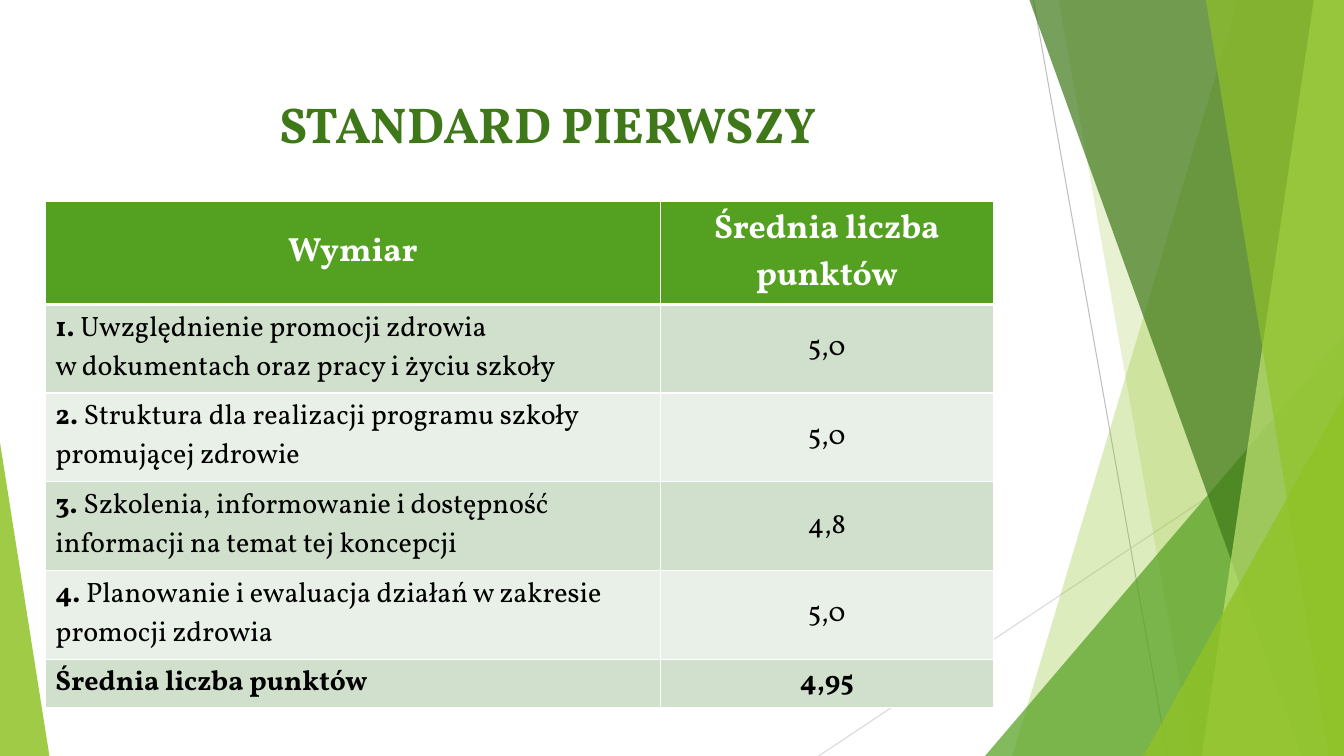
from dataclasses import dataclass

import pptx
import pptx.dml.color
import pptx.enum.shapes
import pptx.enum.text
import pptx.oxml
import pptx.oxml.ns
import pptx.util

Inches = pptx.util.Inches
ANCHOR = pptx.enum.text.MSO_ANCHOR
ALIGN = pptx.enum.text.PP_ALIGN


@dataclass(frozen=True)
class Theme:
    """Hold the colours, font and type sizes of the slide."""
    font: str = "Vollkorn"
    lime: str = "90C226"
    green: str = "54A021"
    dark: str = "3F7819"
    pale: str = "C0E474"
    band: tuple = ("D1DFCD", "E9F0E8")
    white: str = "FFFFFF"
    black: str = "000000"
    grey: str = "BFBFBF"
    light: str = "D9D9D9"
    title: int = 36
    head: int = 24
    body: int = 20


THEME = Theme()
WIDE, HIGH = 13.33, 7.5

WEDGES = [
    (12.28, 10.04, THEME.lime, 30),
    (10.5, 11.83, THEME.lime, 20),
    (10.21, 12.91, THEME.dark, 70),
    (13.03, 11.92, THEME.pale, 70),
    (11.96, 13.18, THEME.lime, 65),
]
ROWS = [
    ("1. ", "Uwzględnienie promocji zdrowia\vw dokumentach oraz pracy i życiu szkoły", "5,0"),
    ("2. ", "Struktura dla realizacji programu szkoły promującej zdrowie", "5,0"),
    ("3. ", "Szkolenia, informowanie i dostępność informacji na temat tej koncepcji", "4,8"),
    ("4. ", "Planowanie i ewaluacja działań w zakresie promocji zdrowia", "5,0"),
]


def rgb(code):
    """Turn a hex code into a colour."""
    return pptx.dml.color.RGBColor.from_string(code)


def paint(shape, code, alpha):
    """Fill a shape with a see-through colour and no outline."""
    shape.shadow.inherit = False
    shape.line.fill.background()
    shape.fill.solid()
    shape.fill.fore_color.rgb = rgb(code)
    tint = shape.fill._xPr.find(".//" + pptx.oxml.ns.qn("a:srgbClr"))
    tint.append(pptx.oxml.parse_xml(
        f'<a:alpha {pptx.oxml.ns.nsdecls("a")} val="{alpha * 1000}"/>'))


def wedge(slide, top, base, code, alpha):
    """Draw a facet from a slanted edge to the right side."""
    spots = [(WIDE, 0), (WIDE, HIGH), (base, HIGH)]
    build = slide.shapes.build_freeform(Inches(top), Inches(0))
    build.add_line_segments([(Inches(x), Inches(y)) for x, y in spots])
    paint(build.convert_to_shape(), code, alpha)


def peak(slide, left, top, width, tip, code, alpha):
    """Draw a triangle that stands on the bottom edge."""
    shape = slide.shapes.add_shape(
        pptx.enum.shapes.MSO_SHAPE.ISOSCELES_TRIANGLE,
        Inches(left), Inches(top), Inches(width), Inches(HIGH - top))
    shape.adjustments[0] = tip
    paint(shape, code, alpha)


def rule(slide, start, end, code):
    """Draw a thin straight line."""
    line = slide.shapes.add_connector(
        pptx.enum.shapes.MSO_CONNECTOR.STRAIGHT,
        *(Inches(v) for v in start + end))
    line.line.color.rgb = rgb(code)
    line.line.width = pptx.util.Pt(0.75)
    line._element.spPr.append(pptx.oxml.parse_xml(
        f'<a:effectLst {pptx.oxml.ns.nsdecls("a")}/>'))


def write(frame, runs, size, code, align=ALIGN.LEFT):
    """Add text and bold pairs as runs of one paragraph."""
    para = frame.paragraphs[0]
    para.alignment = align
    for text, bold in runs:
        for i, part in enumerate(text.split("\v")):
            if i:
                para.add_line_break()
            run = para.add_run()
            run.text = part
            run.font.name = THEME.font
            run.font.size = pptx.util.Pt(size)
            run.font.bold = bold
            run.font.color.rgb = rgb(code)


def title(slide, text):
    """Add the slide heading."""
    box = slide.shapes.add_textbox(
        Inches(0.73), Inches(0.87), Inches(9.4), Inches(1.13))
    box.text_frame.word_wrap = True
    write(box.text_frame, [(text, True)], THEME.title, THEME.dark, ALIGN.CENTER)


def edge(cell, base):
    """Give a cell white borders, with its own bottom and top weight."""
    props = cell._tc.get_or_add_tcPr()
    widths = {"L": 1, "R": 1, "T": base[0], "B": base[1]}
    for i, (side, width) in enumerate(widths.items()):
        props.insert(i, pptx.oxml.parse_xml(
            f'<a:ln{side} {pptx.oxml.ns.nsdecls("a")} w="{pptx.util.Pt(width)}">'
            f'<a:solidFill><a:srgbClr val="{THEME.white}"/></a:solidFill>'
            f'</a:ln{side}>'))


def table(slide):
    """Add the table of dimensions and mean scores."""
    tall = [1.02] + [0.88] * len(ROWS) + [0.48]
    wide = [6.1, 3.3]
    grid = slide.shapes.add_table(
        len(tall), len(wide), Inches(0.45), Inches(2),
        Inches(sum(wide)), Inches(sum(tall))).table
    for col, width in zip(grid.columns, wide):
        col.width = Inches(width)
    for row, height in zip(grid.rows, tall):
        row.height = Inches(height)
    mean = "Średnia liczba punktów"
    lines = [([("Wymiar", True)], [(mean, True)])]
    lines += [([(mark, True), (text, False)], [(score, False)])
              for mark, text, score in ROWS]
    lines.append(([(mean, True)], [("4,95", True)]))
    for r, line in enumerate(lines):
        head = r == 0
        for c, runs in enumerate(line):
            cell = grid.cell(r, c)
            mid = head or c == 1
            cell.vertical_anchor = ANCHOR.MIDDLE if mid else ANCHOR.TOP
            cell.fill.solid()
            cell.fill.fore_color.rgb = rgb(
                THEME.green if head else THEME.band[(r - 1) % 2])
            edge(cell, (3 if r == 1 else 1, 3 if head else 1))
            write(cell.text_frame, runs, THEME.head if head else THEME.body,
                  THEME.white if head else THEME.black,
                  ALIGN.CENTER if mid else ALIGN.LEFT)


def main():
    """Build the slide and save it."""
    deck = pptx.Presentation()
    deck.slide_width, deck.slide_height = Inches(WIDE), Inches(HIGH)
    slide = deck.slides.add_slide(deck.slide_layouts[6])
    rule(slide, (10.25, 0), (11.58, HIGH), THEME.grey)
    rule(slide, (WIDE, 4.03), (8.12, HIGH), THEME.light)
    for facet in WEDGES[:2]:
        wedge(slide, *facet)
    peak(slide, 9.77, 3.33, 3.56, 1, THEME.green, 72)
    for facet in WEDGES[2:]:
        wedge(slide, *facet)
    peak(slide, 11.34, 3.93, 1.99, 1, THEME.lime, 80)
    peak(slide, 0, 4.39, 0.49, 0, THEME.lime, 85)
    title(slide, "STANDARD PIERWSZY")
    table(slide)
    deck.save("out.pptx")


if __name__ == "__main__":
    main()
